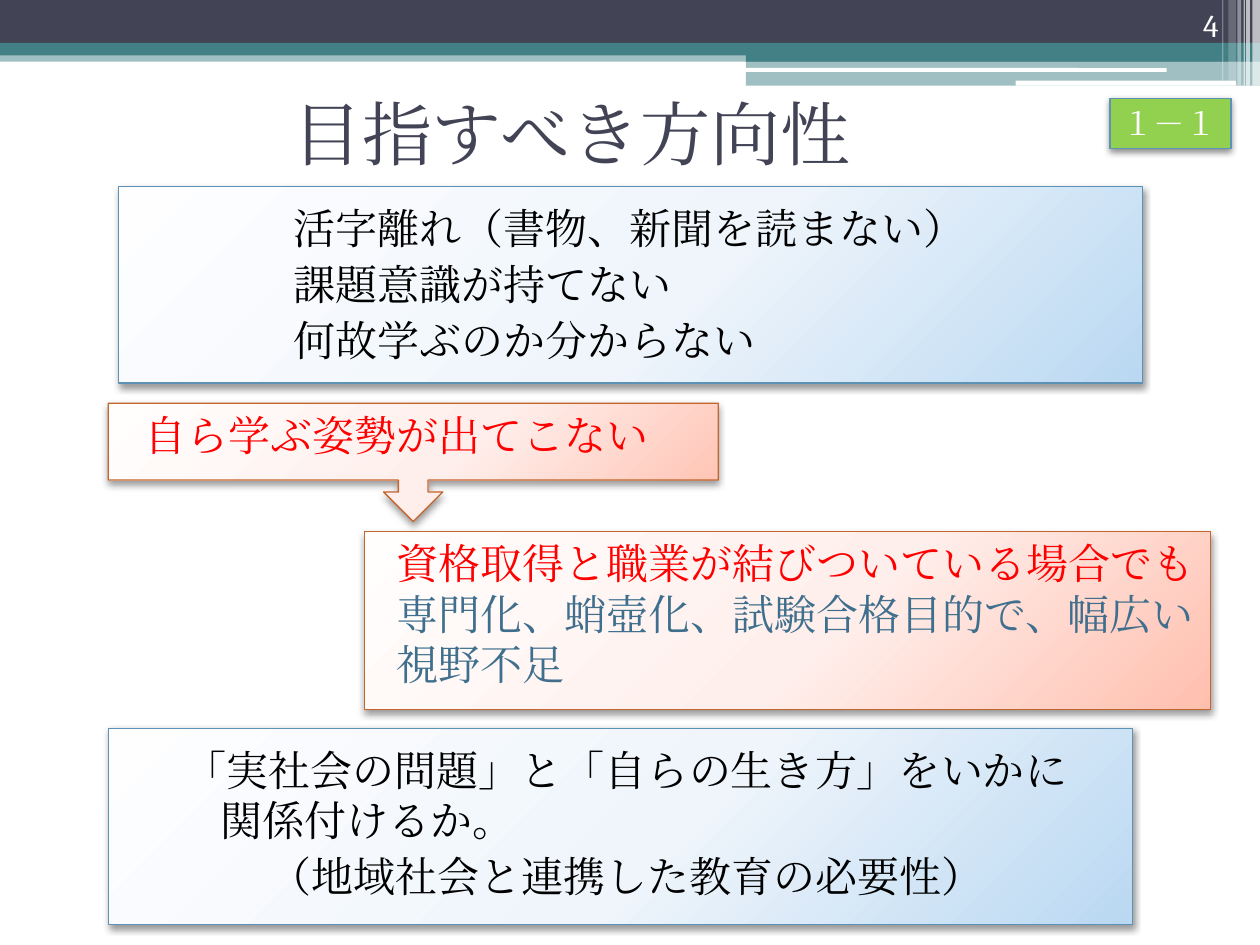
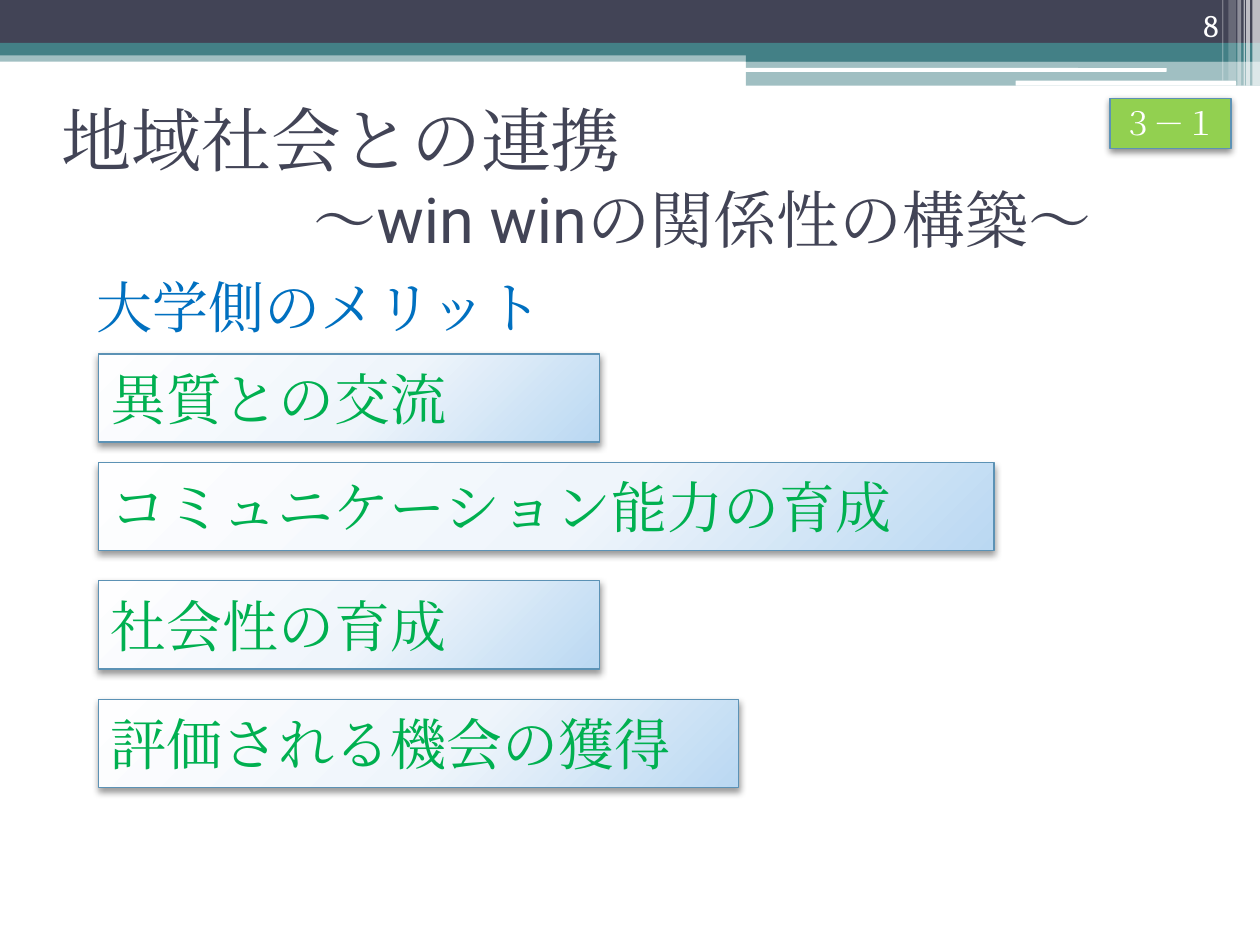
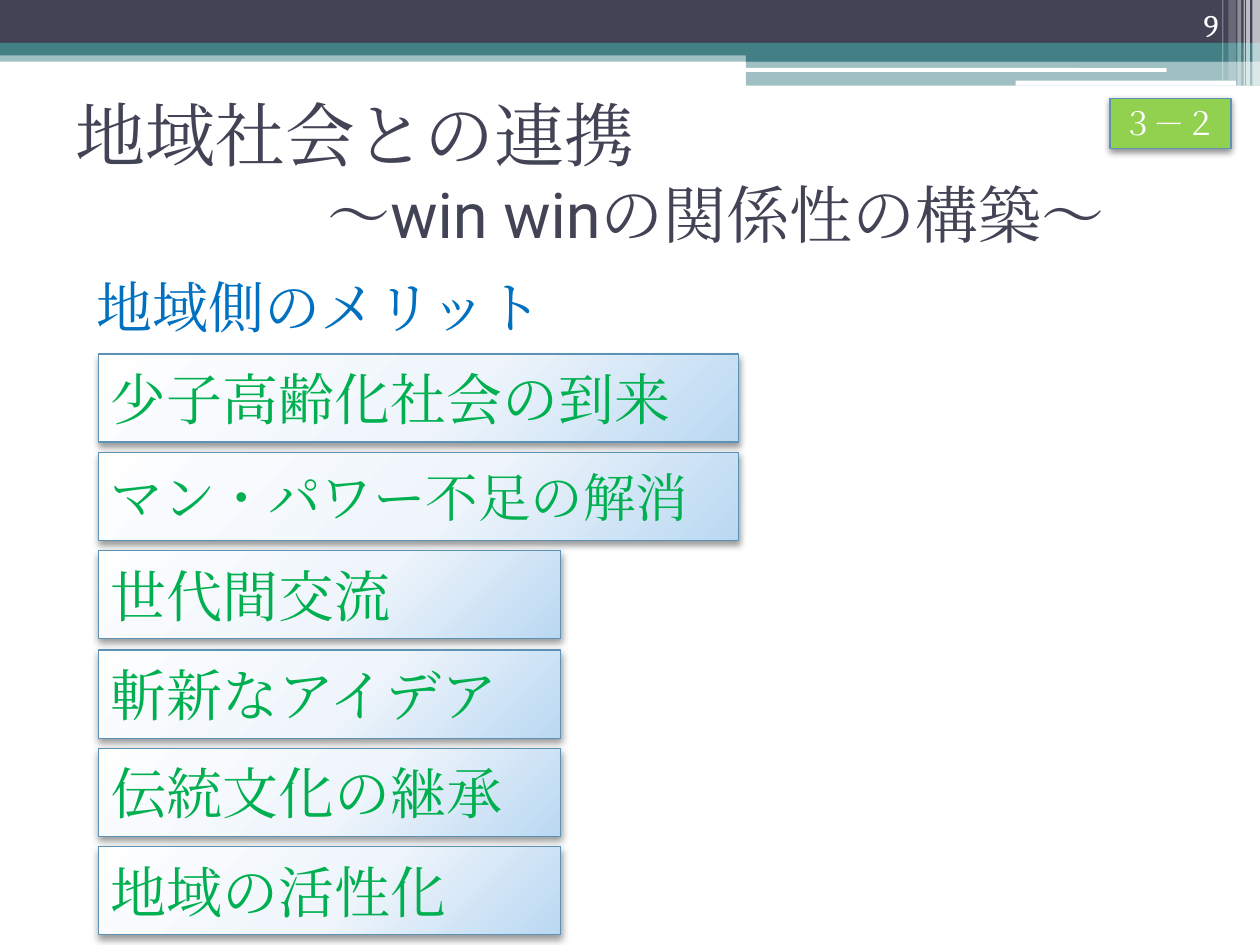
"""Build three slides on learning goals and partnership with the community."""
import dataclasses

import pptx
import pptx.dml.color
import pptx.enum.lang
import pptx.enum.shapes
import pptx.enum.text
import pptx.oxml
import pptx.oxml.ns
import pptx.util
from pptx.util import Inches

SHAPE = pptx.enum.shapes.MSO_SHAPE
ANCHOR = pptx.enum.text.MSO_ANCHOR
RIGHT = pptx.enum.text.PP_ALIGN.RIGHT
qn = pptx.oxml.ns.qn
NS = pptx.oxml.ns.nsdecls("a")


@dataclasses.dataclass(frozen=True)
class Theme:
    """Colours, fonts and type sizes of the deck."""
    navy: str = "424456"
    teal: str = "438086"
    white: str = "FFFFFF"
    black: str = "000000"
    red: str = "FF0000"
    steel: str = "406F8D"
    blue: str = "0070C0"
    green: str = "00B050"
    lime: str = "92D050"
    blue_edge: str = "5C92B5"
    orange_edge: str = "C4652D"
    blue_glow: tuple = ("FEFEFF", "EFF5FB", "BAD8F2")
    orange_glow: tuple = ("FFFEFD", "FFEFEC", "FFBFAE")
    title_font: str = "Roboto"
    body_font: str = "Cambria"
    merit_font: str = "Arial"
    japanese_font: str = "Noto Sans CJK JP"
    title: float = 40
    subtitle: float = 36
    merit: float = 32
    body: float = 24
    small: float = 18


T = Theme()


def draw(slide, at, fill, alpha=100, kind=SHAPE.RECTANGLE, edge=None, shade=40):
    """Add a shape; an edge colour also brings a shadow, three fills a glow."""
    shape = slide.shapes.add_shape(kind, *map(Inches, at))
    shape.shadow.inherit = False
    props = shape.element.spPr
    if edge:
        shape.line.color.rgb = pptx.dml.color.RGBColor.from_string(edge)
        shape.line.width = pptx.util.Pt(0.75)
        props.find(qn("a:effectLst")).append(pptx.oxml.parse_xml(
            f'<a:outerShdw {NS} blurRad="52000" dist="25400" dir="5400000" rotWithShape="0">'
            f'<a:srgbClr val="{T.black}"><a:alpha val="{shade * 1000}"/></a:srgbClr></a:outerShdw>'))
    else:
        shape.line.fill.background()
    if isinstance(fill, tuple):
        stops = "".join(f'<a:gs pos="{pos}000"><a:srgbClr val="{color}"/></a:gs>'
                        for pos, color in zip((0, 55, 100), fill))
        props.insert(2, pptx.oxml.parse_xml(
            f'<a:gradFill {NS} rotWithShape="1"><a:gsLst>{stops}</a:gsLst><a:path path="circle">'
            '<a:fillToRect l="-40000" t="-90000" r="140000" b="190000"/></a:path></a:gradFill>'))
    else:
        shape.fill.solid()
        shape.fill.fore_color.rgb = pptx.dml.color.RGBColor.from_string(fill)
        if alpha < 100:
            props.find(qn("a:solidFill"))[0].append(
                pptx.oxml.parse_xml(f'<a:alpha {NS} val="{alpha * 1000}"/>'))
    return shape


def write(holder, lines, anchor=ANCHOR.TOP, align=pptx.enum.text.PP_ALIGN.LEFT,
          indent=(0, 0), before=0, wrap=True):
    """Fill a shape with lines of (text, size, font, colour[, own indent])."""
    frame = holder.text_frame
    frame.word_wrap = wrap
    frame.vertical_anchor = anchor
    for index, (text, size, font, color, *own) in enumerate(lines):
        line = frame.add_paragraph() if index else frame.paragraphs[0]
        line.alignment = align
        line.space_before = pptx.util.Pt(before)
        margin, first = own[0] if own else indent
        settings = line._p.get_or_add_pPr()
        settings.set("marL", str(Inches(margin)))
        settings.set("indent", str(Inches(first)))
        run = line.add_run()
        run.text = text
        run.font.size = pptx.util.Pt(size)
        run.font.name = font
        run.font.language_id = pptx.enum.lang.MSO_LANGUAGE_ID.JAPANESE
        run.font.color.rgb = pptx.dml.color.RGBColor.from_string(color)
        run.font._rPr.find(qn("a:latin")).addnext(
            pptx.oxml.parse_xml(f'<a:ea {NS} typeface="{T.body_font}"/>'))


HANGING = (0.4, -0.28)
BANDS = [
    ((0, 0.4, 10, 0.09), T.teal, 50),
    ((0, 0, 10, 0.34), T.navy, 100),
    ((0, 0.34, 10, 0.1), T.teal, 100),
    ((5.92, 0.39, 4.08, 0.1), T.teal, 100),
    ((5.92, 0.48, 4.08, 0.2), T.teal, 50),
    ((5.91, 0.54, 3.35, 0.03), T.white, 100, SHAPE.ROUNDED_RECTANGLE),
    ((8.06, 0.64, 1.75, 0.04), T.white, 100, SHAPE.ROUNDED_RECTANGLE),
]
STRIPES = [(9.94, 0.06, 0.68, 65), (9.89, 0.03, 0.68, 65), (9.87, 0.01, 0.68, 60),
           (9.82, 0.03, 0.68, 40), (9.75, 0.06, 0.64, 20), (9.7, 0.01, 0.64, 30)]
BANDS += [((left, 0, width, height), T.white, alpha) for left, width, height, alpha in STRIPES]

partnership = [("地域社会との連携", T.title, T.title_font, T.navy),
               ("～win winの関係性の構築～", T.subtitle, T.title_font, T.navy, (2, 0))]
direction = [("目指すべき方向性", T.title, T.title_font, T.navy)]
pages = [
    ("4", "１－１", (2.22, 0.47, 5.36, 1.17), direction),
    ("8", "３－１", (0.39, 0.7, 9, 1.4), partnership),
    ("9", "３－２", (0.5, 0.62, 9, 1.48), partnership),
]

deck = pptx.Presentation()
deck.slide_width, deck.slide_height = Inches(10), Inches(7.5)
slides = []
for number, section, title_at, title_lines in pages:
    slide = deck.slides.add_slide(deck.slide_layouts[6])
    slides.append(slide)
    for band in BANDS:
        draw(slide, *band)
    title = slide.shapes.add_textbox(*map(Inches, title_at))
    write(title, title_lines, ANCHOR.MIDDLE)
    page_number = slide.shapes.add_textbox(*map(Inches, (8.94, 0, 0.83, 0.4)))
    write(page_number, [(number, T.small, T.body_font, T.white)], ANCHOR.BOTTOM, RIGHT)
    badge = draw(slide, (8.81, 0.78, 0.96, 0.4), T.lime, edge=T.blue_edge, shade=45)
    write(badge, [(section, T.small, T.body_font, T.white)], wrap=False)

goals, university, community = slides

draw(goals, (0.86, 3.2, 4.84, 0.94), T.orange_glow,
     kind=SHAPE.DOWN_ARROW_CALLOUT, edge=T.orange_edge)
draw(goals, (2.89, 4.22, 6.72, 1.41), T.orange_glow, edge=T.orange_edge)
for left, top in ((0.94, 1.48), (0.86, 5.78)):
    draw(goals, (left, top, 8.13, 1.56), T.blue_glow, edge=T.blue_edge)

statements = [
    ((2.11, 1.56, 5.98, 1.45), HANGING, 3, [
        ("活字離れ（書物、新聞を読まない）", T.body, T.body_font, T.black),
        ("課題意識が持てない", T.body, T.body_font, T.black),
        ("何故学ぶのか分からない", T.body, T.body_font, T.black)]),
    ((1.05, 3.2, 4.42, 0.62), (0, 0), 0, [
        ("自ら学ぶ姿勢が出てこない", T.body, T.body_font, T.red)]),
    ((3.05, 4.22, 6.64, 1.31), (0, 0), 0, [
        ("資格取得と職業が結びついている場合でも", T.body, T.body_font, T.red),
        ("専門化、蛸壺化、試験合格目的で、幅広い視野不足",
         T.body, T.japanese_font, T.steel)]),
    ((1.25, 5.86, 7.5, 1.45), HANGING, 3, [
        ("「実社会の問題」と「自らの生き方」をいかに関係付けるか。",
         T.body, T.body_font, T.black),
        ("（地域社会と連携した教育の必要性）", T.body, T.body_font, T.black, (0.79, 0))]),
]
for at, indent, before, lines in statements:
    statement = goals.shapes.add_textbox(*map(Inches, at))
    write(statement, lines, indent=indent, before=before)

university_merits = [
    (2.81, 3.98, "異質との交流"),
    (3.67, 7.11, "コミュニケーション能力の育成"),
    (4.61, 3.98, "社会性の育成"),
    (5.55, 5.08, "評価される機会の獲得"),
]
community_names = ["少子高齢化社会の到来", "マン・パワー不足の解消", "世代間交流",
                   "斬新なアイデア", "伝統文化の継承", "地域の活性化"]
community_merits = [(round(2.81 + 0.782 * row, 2), 5.08 if row < 2 else 3.67, name)
                    for row, name in enumerate(community_names)]

for slide, heading, merits in ((university, "大学側のメリット", university_merits),
                               (community, "地域側のメリット", community_merits)):
    side = slide.shapes.add_textbox(*map(Inches, (0.55, 2.11, 9, 0.78)))
    write(side, [(heading, T.merit, T.body_font, T.blue)], indent=HANGING, before=3)
    for top, width, name in merits:
        merit = draw(slide, (0.78, top, width, 0.7), T.blue_glow, edge=T.blue_edge)
        manpower = name.startswith("マン")
        size = T.merit - 2 if manpower else T.merit
        font = T.japanese_font if manpower else T.merit_font
        write(merit, [(name, size, font, T.green)], ANCHOR.MIDDLE)

deck.save("out.pptx")
